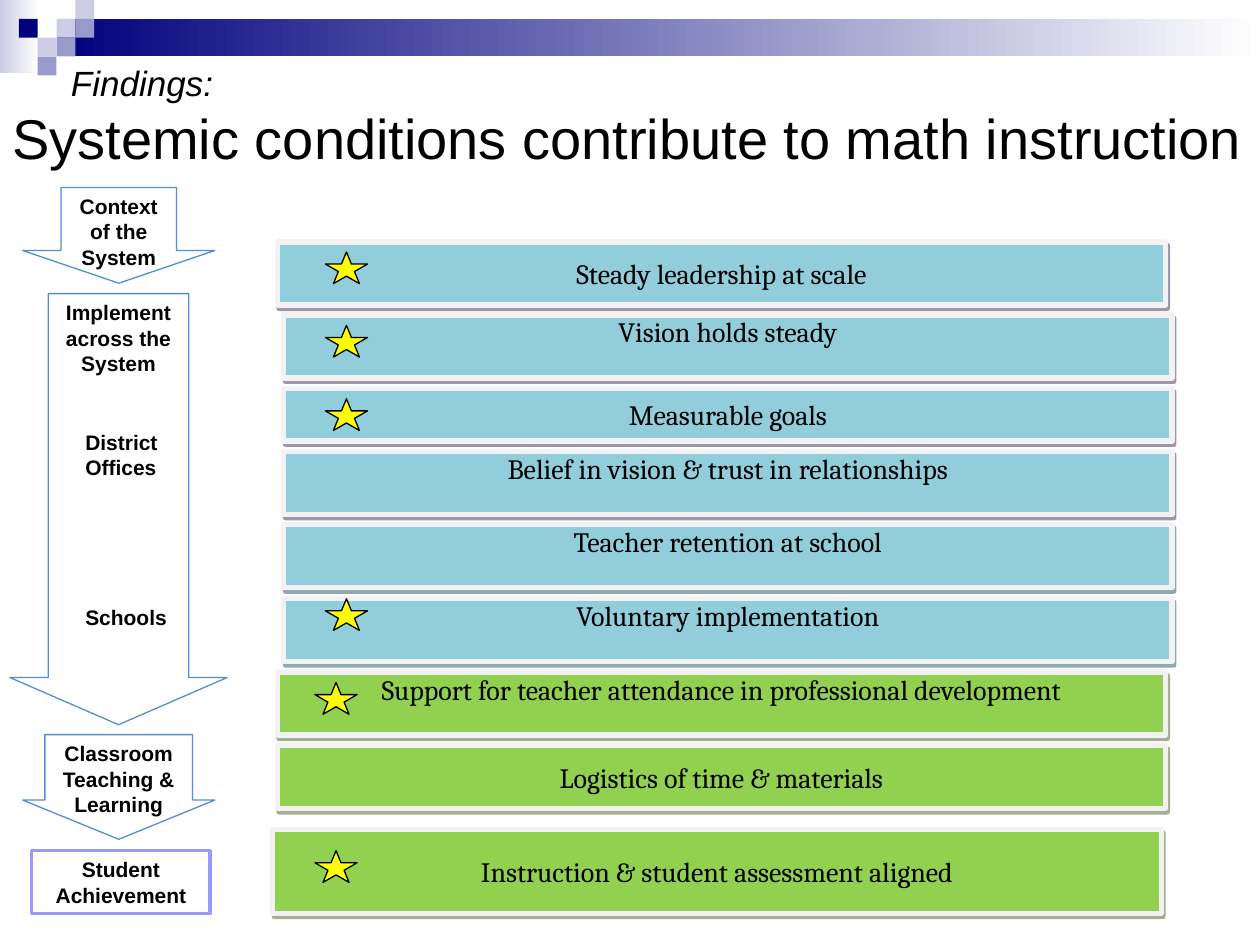
from lxml import etree
from pptx import Presentation
from pptx.dml.color import RGBColor
from pptx.enum.shapes import MSO_SHAPE
from pptx.enum.text import MSO_ANCHOR, PP_ALIGN
from pptx.oxml.ns import qn
from pptx.util import Cm, Pt

RECT, ARROW, STAR = MSO_SHAPE.RECTANGLE, MSO_SHAPE.DOWN_ARROW, MSO_SHAPE.STAR_5_POINT
TOP, MIDDLE = MSO_ANCHOR.TOP, MSO_ANCHOR.MIDDLE
LEFT, CENTER = PP_ALIGN.LEFT, PP_ALIGN.CENTER

BLACK = RGBColor(0x00, 0x00, 0x00)
WHITE = RGBColor(0xFF, 0xFF, 0xFF)
NAVY = RGBColor(0x00, 0x00, 0x7D)
PALE = RGBColor(0xCC, 0xCC, 0xE6)
LILAC = RGBColor(0x99, 0x99, 0xCC)
VIOLET = RGBColor(0x99, 0x99, 0xFF)
BLUE = RGBColor(0x54, 0x8D, 0xD4)
AQUA = RGBColor(0x92, 0xCD, 0xDC)
GREEN = RGBColor(0x92, 0xD0, 0x50)
YELLOW = RGBColor(0xFF, 0xFF, 0x00)
FRAME = RGBColor(0xF2, 0xF2, 0xF2)
PLUM = RGBColor(0x3F, 0x31, 0x51)
TEAL = RGBColor(0x20, 0x58, 0x67)
OLIVE = RGBColor(0x4E, 0x61, 0x28)


class Deck:
    sans, serif = "Arial", "Cambria"

    def __init__(self, slide):
        self.slide = slide

    def shape(self, kind, box, fill=None, line=None, width=0.75):
        item = self.slide.shapes.add_shape(kind, *map(Cm, box))
        item.shadow.inherit = False
        if fill is None:
            item.fill.background()
        else:
            item.fill.solid()
            item.fill.fore_color.rgb = fill
        if line is None:
            item.line.fill.background()
        else:
            item.line.color.rgb = line
            item.line.width = Pt(width)
        return item

    def label(self, item, lines, size, font, bold=False, align=CENTER, anchor=TOP):
        frame = item.text_frame
        frame.word_wrap = True
        frame.vertical_anchor = anchor
        frame.text = "\n".join(lines)
        for para in frame.paragraphs:
            para.alignment = align
            para.font.size = Pt(size)
            para.font.name = font
            para.font.bold = bold
            para.font.color.rgb = BLACK
        return frame

    def text(self, box, lines, size, bold=False, anchor=TOP):
        item = self.slide.shapes.add_textbox(*map(Cm, box))
        return self.label(item, lines, size, self.sans, bold, LEFT, anchor)

    def fade(self, box, start):
        item = self.shape(RECT, box, start)
        item.fill.gradient()
        item.fill.gradient_angle = 0
        for stop, color in zip(item.fill.gradient_stops, (start, WHITE)):
            stop.color.rgb = color

    def arrow(self, box, adjust, words):
        item = self.shape(ARROW, box, line=BLUE)
        for i, value in enumerate(adjust):
            item.adjustments[i] = value
        self.label(item, [words], 12, self.sans, True)

    def shade(self, item, color):
        effects = item._element.spPr.find(qn("a:effectLst"))
        outer = etree.SubElement(effects, qn("a:outerShdw"), blurRad="0",
                                 dist=str(Pt(2.2)), dir=str(63 * 60000),
                                 algn="ctr", rotWithShape="0")
        rgb = etree.SubElement(outer, qn("a:srgbClr"), val=str(color))
        etree.SubElement(rgb, qn("a:alpha"), val="50000")

    def bar(self, box, words, fill, dark, anchor):
        item = self.shape(RECT, box, fill, FRAME, 3)
        self.shade(item, dark)
        frame = self.label(item, [words], 16, self.serif, anchor=anchor)
        if anchor == TOP:
            frame.margin_top = 0

    def star(self, left, top):
        self.shape(STAR, (left, top, 0.85, 0.64), YELLOW, BLACK)


def main():
    show = Presentation()
    show.slide_width, show.slide_height = Cm(25.4), Cm(19.05)
    deck = Deck(show.slides.add_slide(show.slide_layouts[6]))

    # Header band and tiles
    deck.fade((0, 0, 0.79, 1.47), PALE)
    deck.fade((1.14, 0.38, 24.26, 0.76), NAVY)
    tile = 0.38
    for col, row, color in ((3, 1, PALE), (4, 0, PALE), (4, 1, LILAC), (2, 2, PALE),
                            (1, 1, NAVY), (3, 2, LILAC), (2, 3, LILAC)):
        deck.shape(RECT, (col * tile, row * tile, tile, tile), color)

    # Levels of the system
    deck.arrow((0.46, 3.78, 3.87, 1.93), (0.602, 0.341), "Context of the System")
    deck.arrow((0.2, 5.92, 4.38, 8.69), (0.646, 0.217), "Implement across the System")
    deck.text((1.47, 8.53, 3.38, 0.6), ["District Offices"], 12, True)
    deck.text((1.47, 12.07, 3, 0.63), ["Schools"], 12, True)
    deck.arrow((0.46, 14.81, 3.87, 2.11), (0.769, 0.374), "Classroom Teaching & Learning")
    goal = deck.shape(RECT, (0.64, 17.15, 3.6, 1.27), WHITE, VIOLET, 2)
    deck.label(goal, ["Student", "Achievement"], 12, deck.sans, True)

    # Title
    title = deck.text((0, 0.43, 25.4, 3.81),
                      ["Findings:", "Systemic conditions contribute to math instruction"],
                      32, anchor=MIDDLE)
    lead = title.paragraphs[0]
    lead.font.size = Pt(20)
    lead.font.italic = True
    lead._p.get_or_add_pPr().set("marL", str(Cm(1.18)))

    # Conditions: left, top, height, words, fill, shadow, anchor
    wide = 17.91
    for left, top, high, words, fill, dark, anchor in (
        (5.59, 4.88, 1.27, "Steady leadership at scale", AQUA, PLUM, MIDDLE),
        (5.72, 6.35, 1.27, "Vision holds steady", AQUA, PLUM, TOP),
        (5.72, 7.83, 1.06, "Measurable goals", AQUA, PLUM, MIDDLE),
        (5.72, 9.1, 1.27, "Belief in vision & trust in relationships", AQUA, PLUM, TOP),
        (5.72, 10.58, 1.27, "Teacher retention at school", AQUA, TEAL, TOP),
        (5.72, 12.07, 1.27, "Voluntary implementation", AQUA, TEAL, TOP),
        (5.59, 13.55, 1.27, "Support for teacher attendance in professional development",
         GREEN, OLIVE, TOP),
        (5.59, 15.03, 1.27, "Logistics of time & materials", GREEN, OLIVE, MIDDLE),
        (5.5, 16.72, 1.69, "Instruction & student assessment aligned",
         GREEN, OLIVE, MIDDLE),
    ):
        deck.bar((left, top, wide, high), words, fill, dark, anchor)

    # Stars
    for left, tops in ((6.56, (5.08, 6.56, 8.04, 12.07)), (6.35, (13.76, 17.15))):
        for top in tops:
            deck.star(left, top)

    show.save("out.pptx")


if __name__ == "__main__":
    main()
